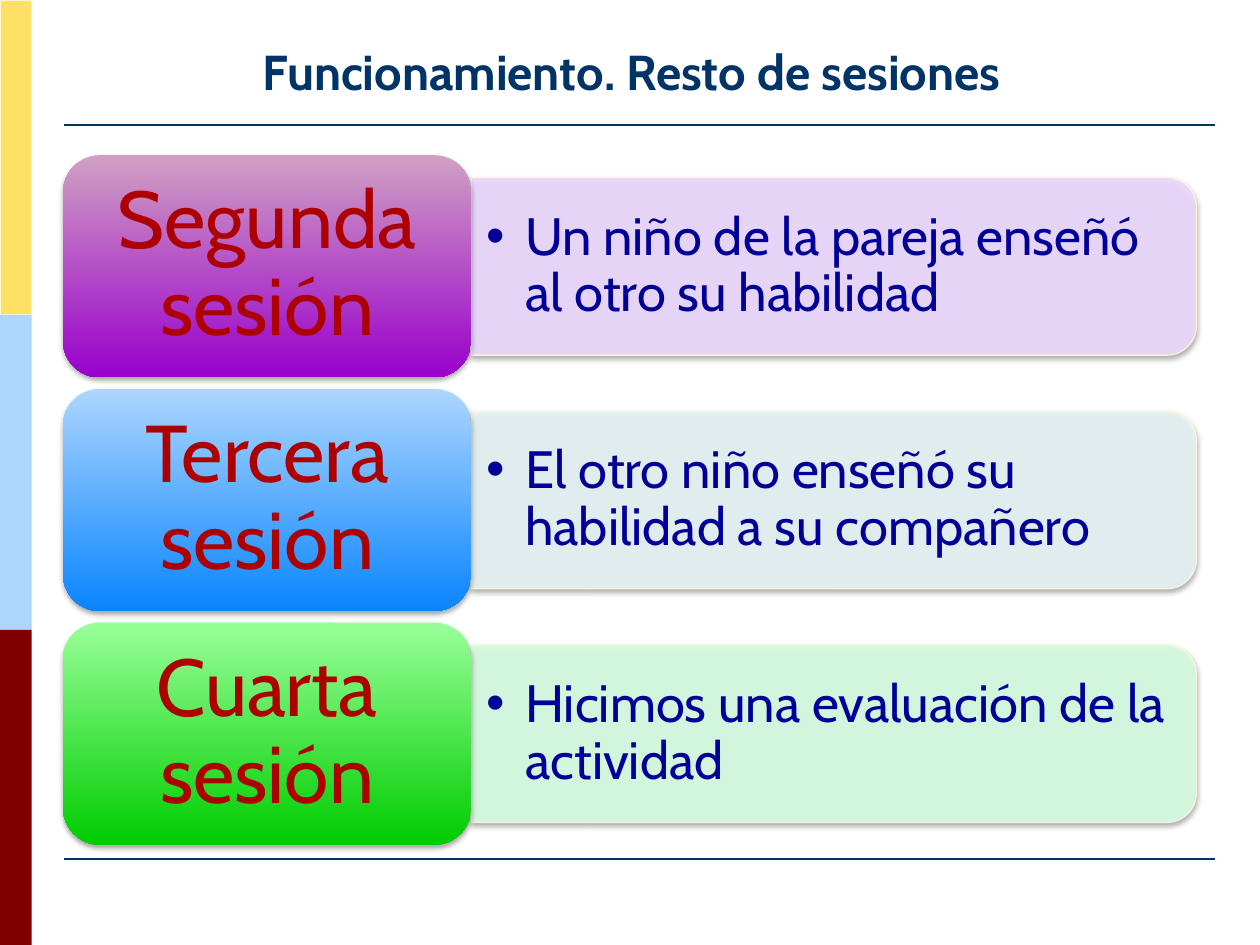
"""Build the slide that lists the remaining sessions as three cards with notes."""
from dataclasses import dataclass

from lxml import etree
from pptx import Presentation
from pptx import util as u
from pptx.dml.color import RGBColor
from pptx.enum import shapes, text
from pptx.oxml import ns, parse_xml


@dataclass(frozen=True)
class Theme:
    font: str = "Cabin"
    navy: str = "003366"
    card_text: str = "AD0000"
    list_text: str = "000099"
    panel_edge: str = "FFF7DA"
    stripe_edge: str = "FFF6D0"
    stripes: tuple = ("FFE066", "ADD6FF", "800000")
    title_size: int = 28
    card_size: int = 46
    list_size: int = 30


theme = Theme()
rgb = RGBColor.from_string
SHADOW = (
    '<a:outerShdw blurRad="39400" dist="22900" dir="5400000" rotWithShape="0">'
    '<a:srgbClr val="000000"><a:alpha val="35000"/></a:srgbClr></a:outerShdw>'
)


def set_effect(shape, effect=""):
    properties = shape._element.spPr
    for old in properties.findall(ns.qn("a:effectLst")):
        properties.remove(old)
    properties.append(parse_xml(f'<a:effectLst {ns.nsdecls("a")}>{effect}</a:effectLst>'))


def write(shape, words, size, colour, anchor, align, bold=False, spacing=1.0):
    frame = shape.text_frame
    frame.word_wrap = True
    frame.auto_size = text.MSO_AUTO_SIZE.NONE
    frame.vertical_anchor = anchor
    para = frame.paragraphs[0]
    para.alignment = align
    para.line_spacing = spacing
    para.space_before = u.Pt(0)
    span = para.add_run()
    span.text = words
    span.font.name = theme.font
    span.font.size = u.Pt(size)
    span.font.bold = bold
    span.font.color.rgb = rgb(colour)
    return para


deck = Presentation()
deck.slide_width, deck.slide_height = u.Cm(25.4), u.Cm(19.05)
page = deck.slides.add_slide(deck.slide_layouts.get_by_name("Comparison"))
title, *lists = page.placeholders
spare = lists.pop()
spare._element.getparent().remove(spare._element)

for index, colour in enumerate(theme.stripes):
    stripe = page.shapes.add_shape(
        shapes.MSO_SHAPE.RECTANGLE, u.Cm(0), u.Cm(6.35 * index), u.Cm(0.64), u.Cm(6.35)
    )
    stripe.fill.solid()
    stripe.fill.fore_color.rgb = rgb(colour)
    stripe.line.fill.background()
    stripe.shadow.inherit = False
    if index == 0:
        stripe.line.color.rgb = rgb(theme.stripe_edge)
        stripe.line.width = u.Pt(0.75)

for y in (2.52, 17.32):
    rule = page.shapes.add_connector(
        shapes.MSO_CONNECTOR.STRAIGHT, u.Cm(1.3), u.Cm(y), u.Cm(24.5), u.Cm(y)
    )
    rule.line.color.rgb = rgb(theme.navy)
    rule.line.width = u.Pt(1.5)
    set_effect(rule)

title.left, title.top, title.width, title.height = u.Cm(1.3), u.Cm(0), u.Cm(22.86), u.Cm(2.16)
write(title, "Funcionamiento. Resto de sesiones", theme.title_size, theme.navy,
      text.MSO_ANCHOR.BOTTOM, text.PP_ALIGN.CENTER, bold=True)

sessions = [
    ("Segunda sesión", "Un niño de la pareja enseñó al otro su habilidad",
     "D0A0C2", "9900CC", "ECD9FF"),
    ("Tercera sesión", "El otro niño enseñó su habilidad a su compañero",
     "ADD6FF", "0A85FF", "E6F3F4"),
    ("Cuarta sesión", "Hicimos una evaluación de la actividad",
     "99FF99", "00CC00", "D6FEE2"),
]
card_left, card_width, card_height, pitch = 1.27, 8.23, 4.48, 4.71
panel_left, panel_width, panel_height = card_left + card_width, 14.62, 3.58
list_width, list_height = 14.45, 3.23

for row, (name, note, light, dark, tint) in enumerate(sessions):
    card_top = 3.13 + row * pitch
    middle = card_top + card_height / 2

    panel = page.shapes.add_shape(
        shapes.MSO_SHAPE.ROUND_2_SAME_RECTANGLE,
        u.Cm(panel_left + (panel_width - panel_height) / 2), u.Cm(middle - panel_width / 2),
        u.Cm(panel_height), u.Cm(panel_width),
    )
    panel.rotation = 90
    panel.fill.solid()
    panel.fill.fore_color.rgb = rgb(tint)
    panel.line.color.rgb = rgb(theme.panel_edge)
    panel.line.width = u.Pt(0.75)
    for colour in panel._element.spPr.iter(ns.qn("a:srgbClr")):
        etree.SubElement(colour, ns.qn("a:alpha"), val="90000")
    set_effect(panel, SHADOW)

    card = page.shapes.add_shape(
        shapes.MSO_SHAPE.ROUNDED_RECTANGLE,
        u.Cm(card_left), u.Cm(card_top), u.Cm(card_width), u.Cm(card_height),
    )
    card.fill.gradient()
    card.fill.gradient_angle = 270
    for stop, colour in zip(card.fill.gradient_stops, (light, dark)):
        stop.color.rgb = rgb(colour)
    card.line.fill.background()
    set_effect(card, SHADOW)
    card.text_frame.margin_left = card.text_frame.margin_right = u.Cm(0.5)
    write(card, name, theme.card_size, theme.card_text,
          text.MSO_ANCHOR.MIDDLE, text.PP_ALIGN.CENTER, spacing=0.9)

    box = lists[row]
    box.left, box.top = u.Cm(panel_left), u.Cm(middle - list_height / 2)
    box.width, box.height = u.Cm(list_width), u.Cm(list_height)
    box.text_frame.margin_left = box.text_frame.margin_right = u.Cm(0.3)
    box.text_frame.margin_top = box.text_frame.margin_bottom = u.Cm(0.15)
    para = write(box, note, theme.list_size, theme.list_text,
                 text.MSO_ANCHOR.MIDDLE, text.PP_ALIGN.LEFT, spacing=0.9)
    layout = para._p.get_or_add_pPr()
    layout.set("marL", str(u.Cm(0.79)))
    layout.set("indent", str(-u.Cm(0.79)))
    etree.SubElement(layout, ns.qn("a:buChar"), char="•")
    page.shapes._spTree.append(box._element)

deck.save("out.pptx")
